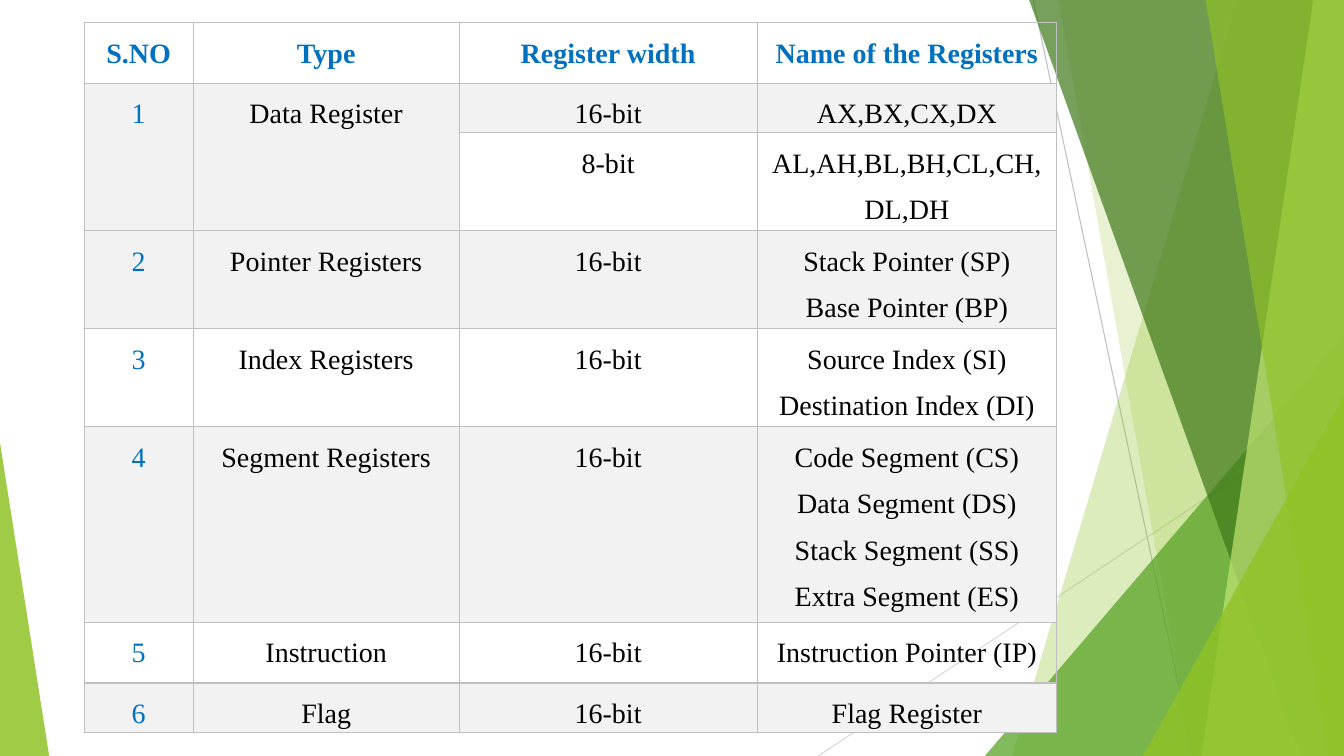
from lxml import etree
from pptx import Presentation
from pptx.dml.color import RGBColor
from pptx.enum.shapes import MSO_CONNECTOR, MSO_SHAPE
from pptx.enum.text import PP_ALIGN
from pptx.oxml.ns import qn
from pptx.util import Cm, Pt

STRAIGHT = MSO_CONNECTOR.STRAIGHT
TRIANGLE = MSO_SHAPE.ISOSCELES_TRIANGLE
CENTER = PP_ALIGN.CENTER

WIDTH, HEIGHT = 33.87, 19.05
BLUE, BLACK, STRIPE, GRID = "0070C0", "000000", "F2F2F2", "BFBFBF"
LIME, GREEN, DARK_GREEN, PALE_LIME = "90C226", "54A021", "3F7819", "C0E474"

COLUMN_WIDTHS = [2.75, 6.7, 7.51, 7.55]
ROW_HEIGHTS = [1.53, 1.24, 2.47, 2.47, 2.47, 4.93, 1.53, 1.24]
REGISTERS = [
    ("S.NO", "Type", "Register width", "Name of the Registers"),
    ("1", "Data Register", "16-bit", "AX,BX,CX,DX"),
    ("", "", "8-bit", "AL,AH,BL,BH,CL,CH,DL,DH"),
    ("2", "Pointer Registers", "16-bit", "Stack Pointer (SP)\nBase Pointer (BP)"),
    ("3", "Index Registers", "16-bit", "Source Index (SI)\nDestination Index (DI)"),
    ("4", "Segment Registers", "16-bit",
     "Code Segment (CS)\nData Segment (DS)\nStack Segment (SS)\nExtra Segment (ES)"),
    ("5", "Instruction", "16-bit", "Instruction Pointer (IP)"),
    ("6", "Flag", "16-bit", "Flag Register"),
]


def rgb(hex_color):
    return RGBColor.from_string(hex_color)


def write(frame, text, font="Times New Roman", size=20, color=BLACK, bold=False):
    """Fill a text frame, one centred paragraph per line of text."""
    frame.text = text
    for paragraph in frame.paragraphs:
        paragraph.alignment = CENTER
        paragraph.line_spacing = 1.5
        paragraph.font.name = font
        paragraph.font.size = Pt(size)
        paragraph.font.bold = bold
        paragraph.font.color.rgb = rgb(color)


class RegisterSlide:
    def __init__(self, presentation):
        self.slide = presentation.slides.add_slide(presentation.slide_layouts[6])
        self.shapes = self.slide.shapes

    def line(self, x1, y1, x2, y2, color):
        connector = self.shapes.add_connector(STRAIGHT, Cm(x1), Cm(y1), Cm(x2), Cm(y2))
        connector.line.color.rgb = rgb(color)
        connector.line.width = Pt(0.75)
        etree.SubElement(connector._element.spPr, qn("a:effectLst"))

    def paint(self, shape, color, opacity):
        shape.shadow.inherit = False
        shape.line.fill.background()
        shape.fill.solid()
        shape.fill.fore_color.rgb = rgb(color)
        color_node = shape._element.spPr.find(qn("a:solidFill"))[0]
        etree.SubElement(color_node, qn("a:alpha"), val=str(opacity * 1000))

    def band(self, top_x, bottom_x, color, opacity):
        """Draw a slanted band that reaches the right edge of the slide."""
        top = Cm(-0.02)
        builder = self.shapes.build_freeform(Cm(top_x), top)
        builder.add_line_segments([(Cm(WIDTH), top), (Cm(WIDTH), Cm(HEIGHT)),
                                   (Cm(bottom_x), Cm(HEIGHT))])
        self.paint(builder.convert_to_shape(), color, opacity)

    def triangle(self, left, top, width, apex, color, opacity):
        """Draw a triangle that stands on the bottom edge of the slide."""
        shape = self.shapes.add_shape(TRIANGLE, Cm(left), Cm(top), Cm(width), Cm(HEIGHT - top))
        shape.adjustments[0] = apex
        self.paint(shape, color, opacity)

    def style_cell(self, cell, fill):
        cell.margin_left = cell.margin_right = Cm(0.18)
        cell.margin_top = cell.margin_bottom = 0
        properties = cell._tc.get_or_add_tcPr()
        for side in ("lnL", "lnR", "lnT", "lnB"):
            border = etree.SubElement(properties, qn("a:" + side), w=str(Pt(1)))
            solid = etree.SubElement(border, qn("a:solidFill"))
            etree.SubElement(solid, qn("a:srgbClr"), val=GRID)
        if fill:
            cell.fill.solid()
            cell.fill.fore_color.rgb = rgb(fill)
        else:
            cell.fill.background()

    def table(self, left, top, rows, widths, heights):
        table = self.shapes.add_table(len(rows), len(widths), Cm(left), Cm(top),
                                      Cm(sum(widths)), Cm(sum(heights))).table
        table.first_row = table.horz_banding = False
        for column, width in zip(table.columns, widths):
            column.width = Cm(width)
        for row, height in zip(table.rows, heights):
            row.height = Cm(height)
        for r, texts in enumerate(rows):
            for c, text in enumerate(texts):
                cell = table.cell(r, c)
                self.style_cell(cell, STRIPE if r % 2 else None)
                write(cell.text_frame, text, bold=r == 0,
                      color=BLUE if r == 0 or c == 0 else BLACK)
        return table


def main():
    presentation = Presentation()
    presentation.slide_width, presentation.slide_height = Cm(WIDTH), Cm(HEIGHT)
    page = RegisterSlide(presentation)

    page.line(26.04, 0, 30.08, HEIGHT, GRID)
    page.line(WIDTH, 10.24, 20.62, HEIGHT, "D9D9D9")
    page.band(31.19, 25.5, LIME, 30)
    page.band(26.67, 30.05, LIME, 20)
    page.triangle(24.82, 8.46, 9.05, 1, GREEN, 72)
    page.band(25.93, 32.79, DARK_GREEN, 70)
    page.band(33.1, 30.28, PALE_LIME, 70)
    page.band(30.38, 33.48, LIME, 65)
    page.triangle(28.8, 9.98, 5.07, 1, LIME, 80)
    page.triangle(0, 11.15, 1.24, 0, LIME, 85)

    registers = page.table(2.12, 0.57, REGISTERS, COLUMN_WIDTHS, ROW_HEIGHTS)
    for column in (0, 1):
        registers.cell(1, column).merge(registers.cell(2, column))

    presentation.save("out.pptx")


if __name__ == "__main__":
    main()
